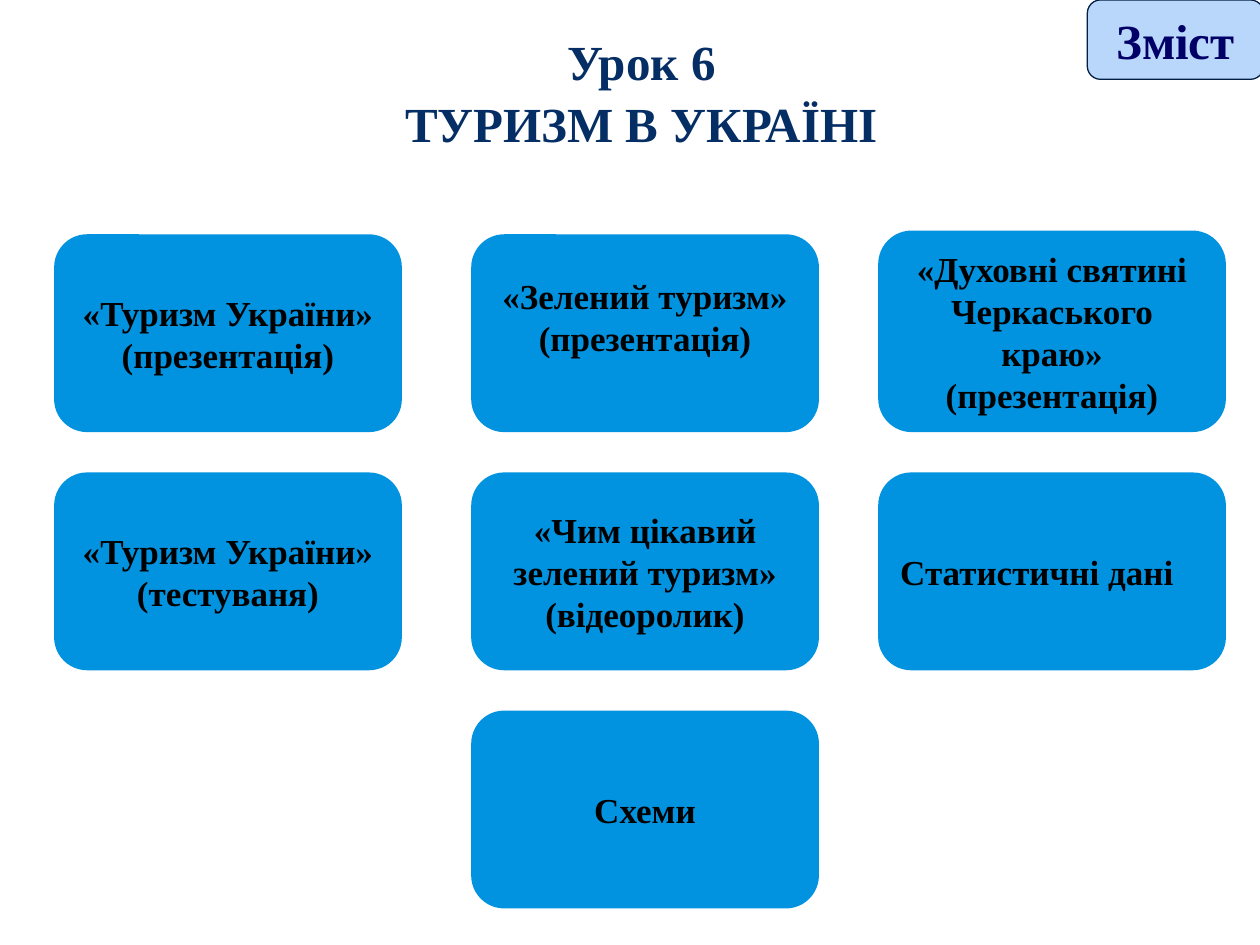
from dataclasses import dataclass

from pptx import Presentation
from pptx.dml.color import RGBColor
from pptx.enum.shapes import MSO_SHAPE
from pptx.enum.text import MSO_ANCHOR, PP_ALIGN
from pptx.util import Inches, Pt

ROUNDED = MSO_SHAPE.ROUNDED_RECTANGLE
CENTER, LEFT = PP_ALIGN.CENTER, PP_ALIGN.LEFT
TOP, MIDDLE, BOTTOM = MSO_ANCHOR.TOP, MSO_ANCHOR.MIDDLE, MSO_ANCHOR.BOTTOM
TITLE_ONLY = 5


@dataclass(frozen=True)
class Theme:
    font: str = "Times New Roman"
    title_color: RGBColor = RGBColor(0x05, 0x2E, 0x65)
    card_fill: RGBColor = RGBColor(0x02, 0x93, 0xE0)
    card_text: RGBColor = RGBColor(0x00, 0x00, 0x00)
    button_fill: RGBColor = RGBColor(0xB9, 0xD6, 0xFB)
    button_line: RGBColor = RGBColor(0x04, 0x1F, 0x44)
    button_text: RGBColor = RGBColor(0x00, 0x00, 0x66)
    heading_size: float = 28
    card_size: float = 20


class LessonSlide:
    """Holds the theme and the current slide."""

    def __init__(self, presentation, theme):
        self.theme = theme
        self.slide = presentation.slides.add_slide(
            presentation.slide_layouts[TITLE_ONLY])

    def set_text(self, frame, lines, size, color, align=CENTER, spacing=1.0,
                 **frame_format):
        for name, value in {"word_wrap": True, **frame_format}.items():
            setattr(frame, name, value)
        font_format = {"name": self.theme.font, "size": Pt(size), "bold": True}
        for index, line in enumerate(lines):
            paragraph = frame.paragraphs[0] if index == 0 else frame.add_paragraph()
            paragraph.alignment = align
            paragraph.line_spacing = spacing
            run = paragraph.add_run()
            run.text = line
            for name, value in font_format.items():
                setattr(run.font, name, value)
            run.font.color.rgb = color

    def title(self, lines, left, top, width, height):
        heading = self.slide.shapes.title
        box = {"left": left, "top": top, "width": width, "height": height}
        for name, value in box.items():
            setattr(heading, name, Inches(value))
        self.set_text(heading.text_frame, lines, self.theme.heading_size,
                      self.theme.title_color, spacing=1.05, vertical_anchor=BOTTOM,
                      margin_top=0, margin_bottom=Inches(0.4))

    def rounded_box(self, left, top, width, height, fill):
        box = self.slide.shapes.add_shape(
            ROUNDED, Inches(left), Inches(top), Inches(width), Inches(height))
        box.shadow.inherit = False
        box.fill.solid()
        box.fill.fore_color.rgb = fill
        box.line.fill.background()
        return box

    def button(self, label, left, top, width, height):
        box = self.rounded_box(left, top, width, height, self.theme.button_fill)
        box.line.color.rgb = self.theme.button_line
        box.line.width = Pt(0.75)
        self.set_text(box.text_frame, [label], self.theme.heading_size,
                      self.theme.button_text, vertical_anchor=TOP)

    def card(self, lines, left, top, width, height, align=CENTER, bottom_inset=0.05):
        box = self.rounded_box(left, top, width, height, self.theme.card_fill)
        self.set_text(box.text_frame, lines, self.theme.card_size,
                      self.theme.card_text, align, vertical_anchor=MIDDLE,
                      margin_bottom=Inches(bottom_inset))


def main():
    presentation = Presentation()
    presentation.slide_width = Inches(10)
    presentation.slide_height = Inches(7.5)
    lesson = LessonSlide(presentation, Theme())

    # Heading and contents button
    lesson.title(["Урок 6", "ТУРИЗМ В УКРАЇНІ"], 0.59, 0.52, 9, 1.09)
    lesson.button("Зміст", 8.63, 0, 1.4, 0.63)

    # Lesson materials: column, row, lines, exceptions to the common format
    columns = (0.43, 3.74, 6.97)
    first_top, row_step = 1.86, 1.89
    card_width, card_height = 2.76, 1.57
    extra_height = 0.03
    materials = [
        (0, 0, ["«Туризм України»", "(презентація)"], {}),
        (1, 0, ["«Зелений туризм»", "(презентація)"], {"bottom_inset": 0.32}),
        (2, 0, ["«Духовні святині Черкаського краю»", "(презентація)"],
         {"top": first_top - extra_height, "height": card_height + extra_height}),
        (0, 1, ["«Туризм України»", "(тестуваня)"], {}),
        (1, 1, ["«Чим цікавий зелений туризм»", "(відеоролик)"], {}),
        (2, 1, ["Статистичні дані"], {"align": LEFT}),
        (1, 2, ["Схеми"], {}),
    ]
    for column, row, lines, exceptions in materials:
        card_format = {"left": columns[column], "top": first_top + row * row_step,
                       "width": card_width, "height": card_height, **exceptions}
        lesson.card(lines, **card_format)

    presentation.save("out.pptx")


if __name__ == "__main__":
    main()
